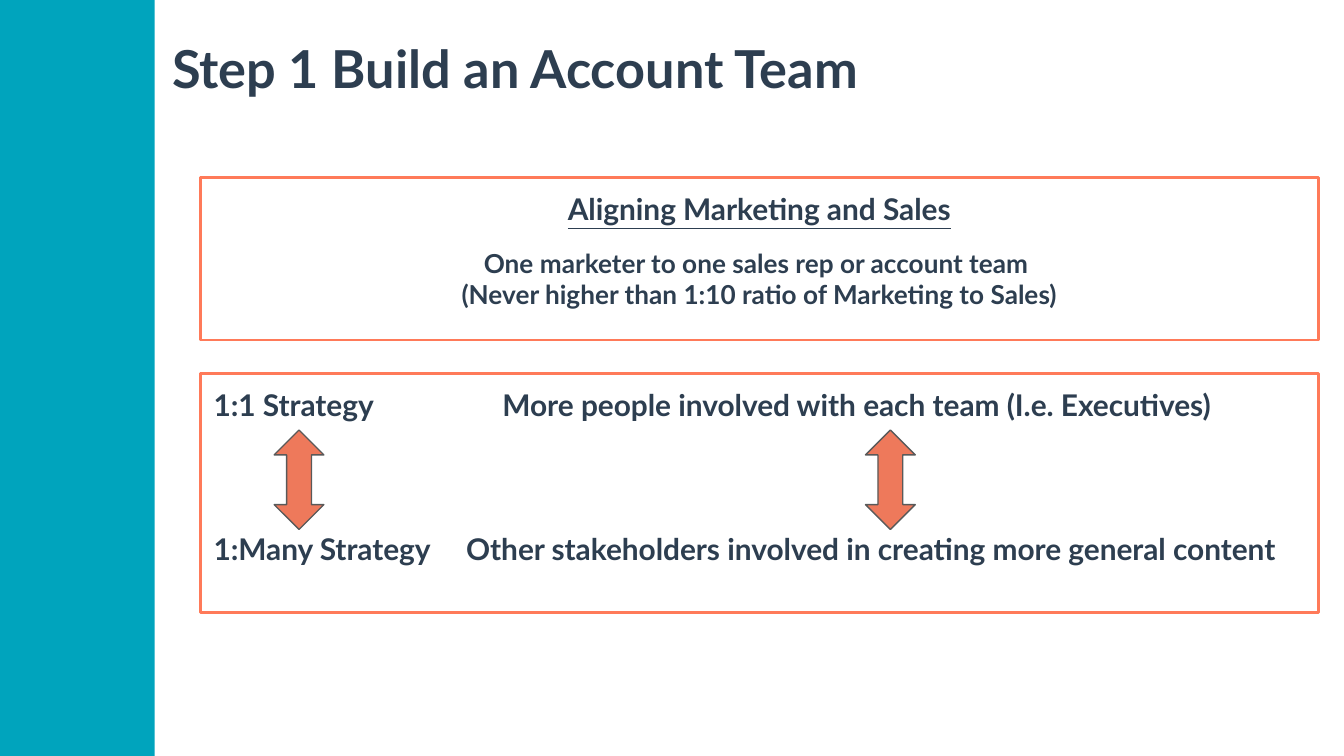
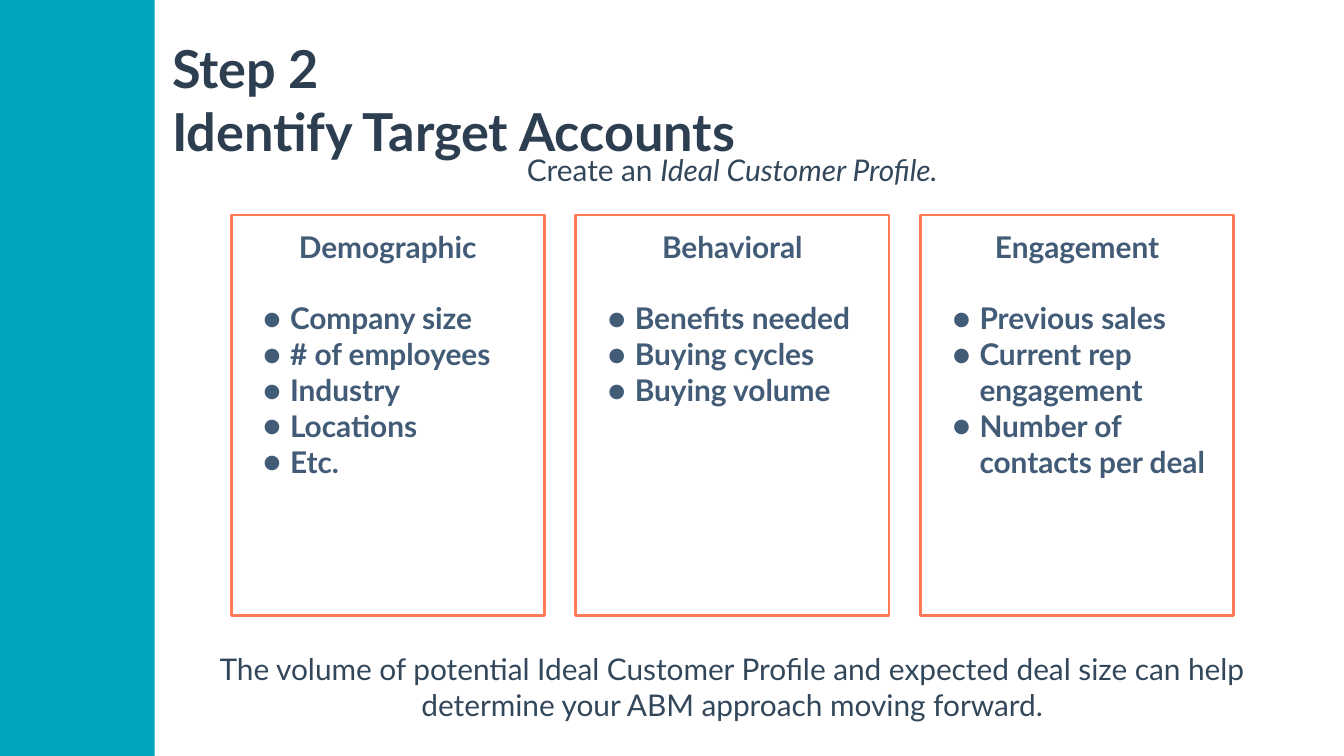
from lxml.etree import SubElement
from pptx import Presentation
from pptx.dml.color import RGBColor
from pptx.enum.shapes import MSO_SHAPE
from pptx.enum.text import MSO_ANCHOR, MSO_AUTO_SIZE, PP_ALIGN
from pptx.oxml.ns import qn
from pptx.util import Inches, Pt

# Shared look
FONT = "Lato"
TEAL = "00A4BD"
NAVY = "2D3E50"
SLATE = "33475B"
STEEL = "425B76"
CORAL = "FF7A59"
ARROW_FILL = "EE795B"
ARROW_LINE = "595959"
PAGE_WIDTH = 10
PAGE_HEIGHT = PAGE_WIDTH * 9 / 16


def color(hex_code):
    return RGBColor.from_string(hex_code)


def style(para, size, hex_code, bold=False, align=PP_ALIGN.LEFT, before=0):
    para.alignment = align
    para.line_spacing = 1
    para.space_before = Pt(before)
    para.space_after = Pt(0)
    for span in para.runs:
        span.font.name = FONT
        span.font.size = Pt(size)
        span.font.bold = bold
        span.font.color.rgb = color(hex_code)


def prepare_frame(box):
    frame = box.text_frame
    frame.word_wrap = True
    frame.auto_size = MSO_AUTO_SIZE.NONE
    frame.vertical_anchor = MSO_ANCHOR.TOP
    frame.margin_left = frame.margin_right = Inches(0.1)
    frame.margin_top = frame.margin_bottom = Inches(0.1)
    return frame


def add_bullet(para, hex_code):
    properties = para._p.get_or_add_pPr()
    properties.set("marL", str(Inches(0.34)))
    properties.set("indent", str(Inches(-0.2)))
    bullet_color = SubElement(properties, qn("a:buClr"))
    SubElement(bullet_color, qn("a:srgbClr"), val=hex_code)
    SubElement(properties, qn("a:buFont"), typeface=FONT)
    SubElement(properties, qn("a:buChar"), char="●")


def add_tab_stop(para, position):
    tabs = SubElement(para._p.get_or_add_pPr(), qn("a:tabLst"))
    SubElement(tabs, qn("a:tab"), pos=str(Inches(position)), algn="l")


def add_block(page, kind, left, top, width, height, fill=None, line=None, weight=1.5):
    block = page.shapes.add_shape(
        kind, Inches(left), Inches(top), Inches(width), Inches(height))
    block.shadow.inherit = False
    if fill:
        block.fill.solid()
        block.fill.fore_color.rgb = color(fill)
    else:
        block.fill.background()
    if line:
        block.line.color.rgb = color(line)
        block.line.width = Pt(weight)
    else:
        block.line.fill.background()
    return block


def add_panel(page, left, top, width, height):
    panel = add_block(page, MSO_SHAPE.RECTANGLE, left, top, width, height, line=CORAL)
    return prepare_frame(panel)


def add_page(deck, title_text):
    """Title-only page with the teal side band."""
    page = deck.slides.add_slide(deck.slide_layouts[5])
    add_block(page, MSO_SHAPE.RECTANGLE, 0, 0, 1.15, PAGE_HEIGHT, fill=TEAL)
    title = page.shapes.title
    title.left, title.top = Inches(1.18), Inches(0.17)
    title.width, title.height = Inches(5.48), Inches(0.7)
    frame = prepare_frame(title)
    frame.text = title_text
    for para in frame.paragraphs:
        style(para, 28, NAVY, bold=True)
    return page


# Regions of the account team page
def alignment_panel(page, left, top, width, height):
    frame = add_panel(page, left, top, width, height)
    frame.text = ("Aligning Marketing and Sales\n"
                  "One marketer to one sales rep or account team \n"
                  "(Never higher than 1:10 ratio of Marketing to Sales)")
    heading, ratio, limit = frame.paragraphs
    style(heading, 16, NAVY, True, PP_ALIGN.CENTER)
    heading.runs[0].font.underline = True
    style(ratio, 14, NAVY, True, PP_ALIGN.CENTER, before=11)
    style(limit, 14, NAVY, True, PP_ALIGN.CENTER)


def strategy_panel(page, left, top, width, height):
    frame = add_panel(page, left, top, width, height)
    rows = [
        ("1:1 Strategy", "More people involved with each team (I.e. Executives)", 2.15, 0),
        ("1:Many Strategy",
         "Other stakeholders involved in creating more general content", 1.88, 57.5),
    ]
    frame.text = "\n".join(f"{strategy}\t{people}" for strategy, people, _, _ in rows)
    for para, (_, _, tab, before) in zip(frame.paragraphs, rows):
        add_tab_stop(para, tab)
        style(para, 16, NAVY, bold=True, before=before)
    for offset in (0.55, 4.95):
        add_block(page, MSO_SHAPE.UP_DOWN_ARROW, left + offset, top + 0.42, 0.37, 0.74,
                  fill=ARROW_FILL, line=ARROW_LINE, weight=0.75)


# Regions of the target accounts page
def profile_card(page, left, top, width, height, heading, items):
    frame = add_panel(page, left, top, width, height)
    frame.text = "\n".join([heading, *items])
    first, *bullets = frame.paragraphs
    style(first, 16, STEEL, True, PP_ALIGN.CENTER)
    for index, para in enumerate(bullets):
        add_bullet(para, STEEL)
        style(para, 16, STEEL, bold=True, before=0 if index else 19.2)


def profile_cards(page, left, top, width, height, cards):
    card_width = 2.33
    pitch = (width - card_width) / (len(cards) - 1)
    for index, (heading, items) in enumerate(cards):
        profile_card(page, left + index * pitch, top, card_width, height, heading, items)


def centered_note(page, top, text, emphasis=""):
    box = page.shapes.add_textbox(Inches(1.35), Inches(top), Inches(8.2), Inches(0.41))
    para = prepare_frame(box).paragraphs[0]
    para.text = text
    if emphasis:
        span = para.add_run()
        span.text = emphasis
        span.font.italic = True
    style(para, 16, SLATE, align=PP_ALIGN.CENTER)


# Pages
def account_team_page(deck):
    page = add_page(deck, "Step 1 Build an Account Team")
    alignment_panel(page, 1.49, 1.32, 8.32, 1.21)
    strategy_panel(page, 1.49, 2.78, 8.32, 1.78)


def target_accounts_page(deck):
    page = add_page(deck, "Step 2\nIdentify Target Accounts")
    centered_note(page, 1.03, "Create an ", "Ideal Customer Profile.")
    profile_cards(page, 1.72, 1.6, 7.46, 2.98, [
        ("Demographic",
         ["Company size", "# of employees", "Industry", "Locations", "Etc."]),
        ("Behavioral", ["Benefits needed", "Buying cycles", "Buying volume"]),
        ("Engagement",
         ["Previous sales", "Current rep engagement", "Number of contacts per deal"]),
    ])
    centered_note(page, 4.74, "The volume of potential Ideal Customer Profile and expected "
                  "deal size can help determine your ABM approach moving forward.")


def main():
    deck = Presentation()
    deck.slide_width, deck.slide_height = Inches(PAGE_WIDTH), Inches(PAGE_HEIGHT)
    account_team_page(deck)
    target_accounts_page(deck)
    deck.save("out.pptx")


if __name__ == "__main__":
    main()
